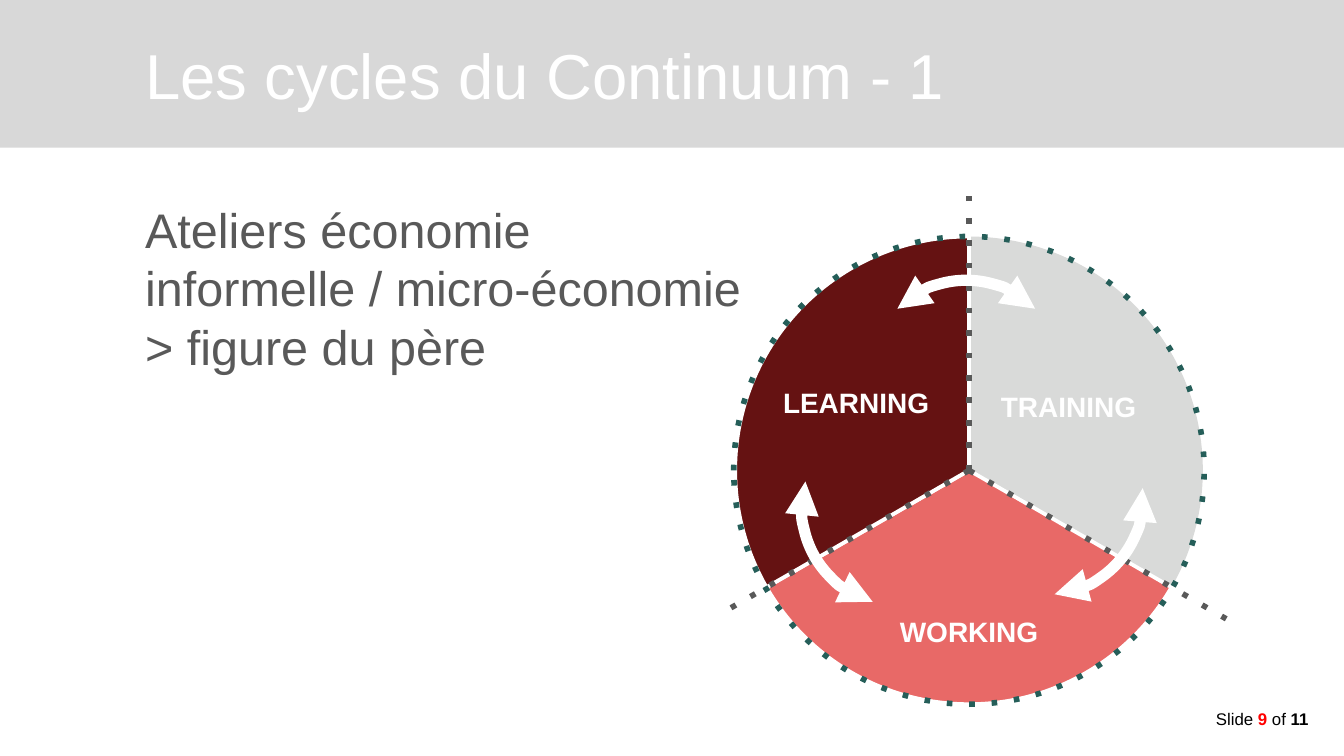
from dataclasses import dataclass
from math import cos, radians, sin

from lxml.etree import SubElement
from pptx import Presentation
from pptx.dml.color import RGBColor
from pptx.enum.shapes import MSO_CONNECTOR as Connector, MSO_SHAPE as Shape
from pptx.enum.text import MSO_ANCHOR as Anchor, MSO_AUTO_SIZE as AutoSize, PP_ALIGN as Align
from pptx.oxml.ns import qn
from pptx.util import Inches, Pt


@dataclass(frozen=True)
class Theme:
    """Colours, font and type sizes of the deck."""
    font: str = "Arial"
    band: str = "D8D8D8"
    white: str = "FFFFFF"
    black: str = "000000"
    text: str = "595959"
    accent: str = "FF0000"
    training: str = "D9DAD9"
    working: str = "E86967"
    learning: str = "651212"
    rim: str = "255E59"
    title_size: int = 34
    body_size: int = 26
    label_size: int = 15
    footer_size: int = 9


@dataclass(frozen=True)
class Box:
    """A rectangle in inches."""
    left: float
    top: float
    width: float
    height: float

    def lengths(self):
        """Return the four measures as lengths."""
        return [Inches(v) for v in (self.left, self.top, self.width, self.height)]

    def centre(self):
        """Return the middle point."""
        return self.left + self.width / 2, self.top + self.height / 2


THEME = Theme()


def centred(x, y, width, height):
    """Return the box of a given size around a point."""
    return Box(x - width / 2, y - height / 2, width, height)


def style_font(font, size, color, bold=False):
    """Apply the theme font with a size, colour and weight."""
    font.name = THEME.font
    font.size = Pt(size)
    font.bold = bold
    font.color.rgb = RGBColor.from_string(color)


def style_frame(frame, anchor=Anchor.TOP, wrap=True):
    """Set margins, anchor and wrapping of a text frame."""
    frame.margin_left = frame.margin_right = Inches(0.07)
    frame.margin_top = frame.margin_bottom = Inches(0.04)
    frame.vertical_anchor = anchor
    frame.word_wrap = wrap
    frame.auto_size = AutoSize.NONE


def style_line(shape, color, width, dotted=False, arrows=False):
    """Set a solid or dotted line, with arrowheads if asked."""
    shape.line.color.rgb = RGBColor.from_string(color)
    shape.line.width = Pt(width)
    line = shape.element.spPr.find(qn("a:ln"))
    if dotted:
        SubElement(line, qn("a:prstDash"), val="dot")
    if arrows:
        for end in ("a:headEnd", "a:tailEnd"):
            SubElement(line, qn(end), type="triangle")


def add_preset(shapes, kind, box, fill=None):
    """Add a shadowless preset shape without a line."""
    shape = shapes.add_shape(kind, *box.lengths())
    shape.shadow.inherit = False
    shape.line.fill.background()
    if fill:
        shape.fill.solid()
        shape.fill.fore_color.rgb = RGBColor.from_string(fill)
    else:
        shape.fill.background()
    return shape


def fill_placeholder(holder, box, text, size, color, anchor):
    """Move a placeholder and give it one left-aligned paragraph."""
    holder.left, holder.top, holder.width, holder.height = box.lengths()
    style_frame(holder.text_frame, anchor)
    para = holder.text_frame.paragraphs[0]
    para.text = text
    para.alignment = Align.LEFT
    para.line_spacing = 1.0
    para.space_before = Pt(0)
    properties = para._p.get_or_add_pPr()
    properties.set("marL", "0")
    properties.set("indent", "0")
    SubElement(properties, qn("a:buNone"))
    style_font(para.font, size, color)


def add_header(page, box):
    """Place the band and the title on it."""
    band = add_preset(page.shapes, Shape.RECTANGLE, box, THEME.band)
    page.shapes.title.element.addprevious(band.element)
    title_box = Box(box.left + 1.01, box.top, box.width - 2.01, box.height)
    fill_placeholder(page.shapes.title, title_box, "Les cycles du Continuum - 1",
                     THEME.title_size, THEME.white, Anchor.MIDDLE)


def add_body(page, box):
    """Place the body text without a bullet."""
    text = "Ateliers économie \vinformelle / micro-économie \v> figure du père"
    fill_placeholder(page.placeholders[1], box, text, THEME.body_size, THEME.text, Anchor.TOP)


def add_footer(page, box):
    """Place the slide count."""
    frame = page.shapes.add_textbox(*box.lengths()).text_frame
    style_frame(frame)
    para = frame.paragraphs[0]
    para.alignment = Align.RIGHT
    for text, color, bold in (("Slide ", THEME.black, False), ("9", THEME.accent, True),
                              (" of ", THEME.black, False), ("11 ", THEME.black, True)):
        span = para.add_run()
        span.text = text
        style_font(span.font, THEME.footer_size, color, bold)


def add_wheel(page, box):
    """Place the three-sector wheel with spokes, labels, arrows and rim."""
    wheel = page.shapes.add_group_shape().shapes
    x, y = box.centre()
    disc = centred(x, y, box.height, box.height)
    for start, fill in ((270, THEME.training), (30, THEME.working), (150, THEME.learning)):
        sector = add_preset(wheel, Shape.PIE, disc, fill)
        sector.adjustments[0] = start * 0.6
        sector.adjustments[1] = (start + 120) % 360 * 0.6
        if fill != THEME.training:
            style_line(sector, THEME.white, 2)

    for angle, length in ((30, 2.21), (150, 2.06), (270, 2.05)):
        end_x = x + length * cos(radians(angle))
        end_y = y + length * sin(radians(angle))
        spoke = wheel.add_connector(Connector.STRAIGHT, *map(Inches, (x, y, end_x, end_y)))
        style_line(spoke, THEME.text, 3, dotted=True)
        SubElement(spoke.element.spPr, qn("a:effectLst"))

    for text, dx, dy in (("LEARNING", -0.84, -0.51), ("TRAINING", 0.74, -0.48), ("WORKING", 0, 1.2)):
        label = wheel.add_textbox(*centred(x + dx, y + dy, 1.25, 0.33).lengths())
        style_frame(label.text_frame, wrap=False)
        para = label.text_frame.paragraphs[0]
        para.text = text
        para.alignment = Align.CENTER
        style_font(para.font, THEME.label_size, THEME.white, bold=True)

    for dx, dy, rotation in ((-0.02, -0.69, 315), (-0.52, 0.28, 195.8), (0.57, 0.2, 84.7)):
        arrow = add_preset(wheel, Shape.ARC, centred(x + dx, y + dy, 1.45, 1.45))
        arrow.rotation = rotation
        style_line(arrow, THEME.white, 6, arrows=True)

    rim = add_preset(wheel, Shape.OVAL, box)
    style_line(rim, THEME.rim, 3, dotted=True)


def main():
    """Build and save the deck."""
    deck = Presentation()
    deck.slide_width, deck.slide_height = Inches(10), Inches(10 * 9 / 16)
    page = deck.slides.add_slide(deck.slide_layouts[1])
    add_header(page, Box(0, 0, 10, 1.1))
    add_body(page, Box(1.01, 1.45, 4.78, 1.79))
    add_wheel(page, Box(5.46, 1.76, 3.5, 3.48))
    add_footer(page, Box(8.66, 5.23, 1.18, 0.23))
    deck.save("out.pptx")


if __name__ == "__main__":
    main()
